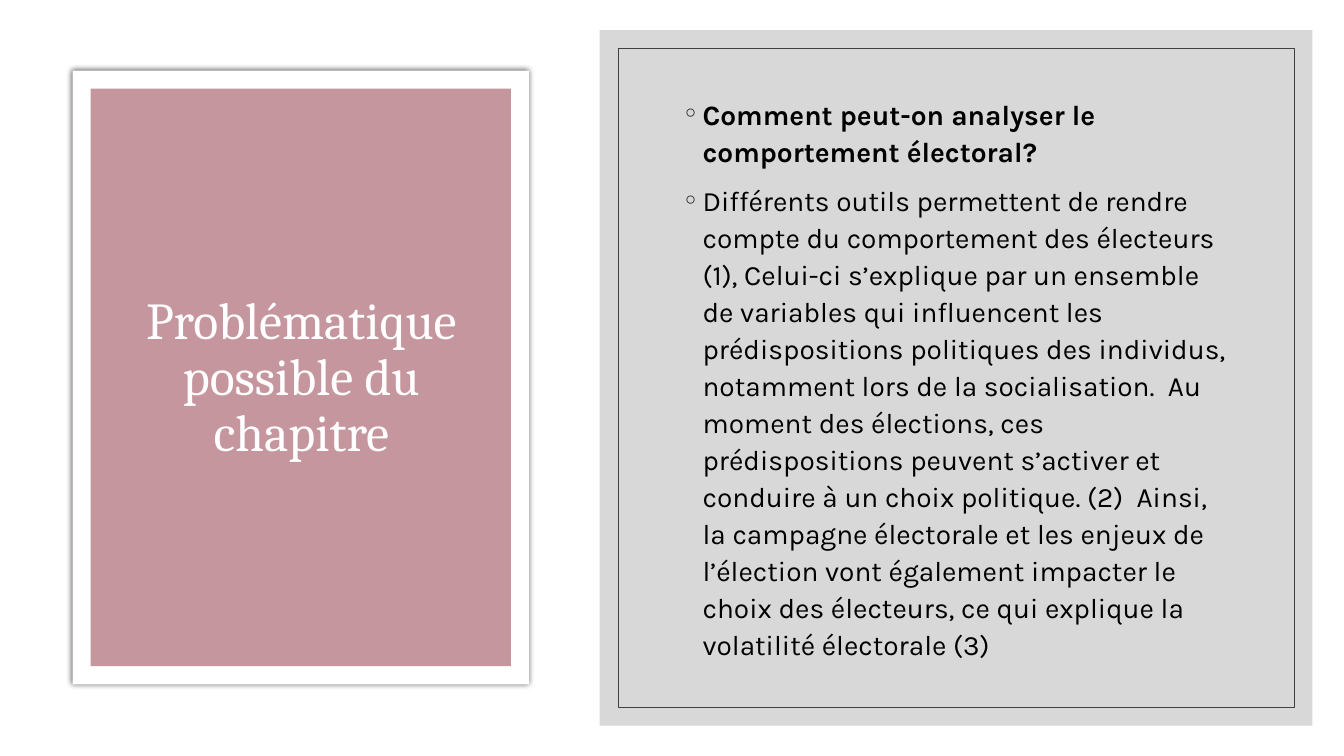
from lxml.etree import SubElement
from pptx import Presentation
from pptx.dml.color import RGBColor
from pptx.enum.shapes import MSO_SHAPE
from pptx.enum.text import MSO_ANCHOR, MSO_AUTO_SIZE, PP_ALIGN
from pptx.oxml.ns import qn
from pptx.util import Pt

TITLE = "Problématique possible du chapitre"
QUESTION = "Comment peut-on analyser le comportement électoral?"
ANSWER = (
    "Différents outils permettent de rendre compte du comportement des électeurs (1), "
    "Celui-ci s’explique par un ensemble de variables qui influencent les prédispositions "
    "politiques des individus, notamment lors de la socialisation.  Au moment des élections, "
    "ces prédispositions peuvent s’activer et conduire à un choix politique. (2)  Ainsi, la "
    "campagne électorale et les enjeux de l’élection vont également impacter le choix des "
    "électeurs, ce qui explique la volatilité électorale (3)"
)
PAGE = (0, 0, 960, 540)
CARD = (51.84, 50.4, 326.16, 438.48)
PANEL = (428.4, 21.6, 509.04, 496.8)
FRAME_GAP = 12.96


def apply(target, formats):
    for name, value in formats.items():
        setattr(target, name, value)


def color(hex_string):
    return RGBColor.from_string(hex_string)


def inset(box, gap):
    left, top, width, height = box
    return left + gap, top + gap, width - 2 * gap, height - 2 * gap


def add_rectangle(slide, box, fill=None, line=None):
    rectangle = slide.shapes.add_shape(MSO_SHAPE.RECTANGLE, *map(Pt, box))
    rectangle.shadow.inherit = False
    if fill:
        rectangle.fill.solid()
        rectangle.fill.fore_color.rgb = color(fill)
    else:
        rectangle.fill.background()
    if line:
        rectangle.line.color.rgb = color(line)
        rectangle.line.width = Pt(0.5)
    else:
        rectangle.line.fill.background()
    return rectangle


def set_alpha(color_element, percent):
    SubElement(color_element, qn("a:alpha"), val=str(percent * 1000))


def add_glow_shadow(card):
    effects = card.element.spPr.find(qn("a:effectLst"))
    shadow = SubElement(effects, qn("a:outerShdw"), blurRad=str(Pt(4)), dist="0",
                        dir="0", algn="ctr", rotWithShape="0")
    set_alpha(SubElement(shadow, qn("a:srgbClr"), val="000000"), 66)


def place_text(placeholder, box):
    left, top, width, height = map(Pt, box)
    apply(placeholder, {"left": left, "top": top, "width": width, "height": height})
    apply(placeholder.text_frame, {"word_wrap": True, "auto_size": MSO_AUTO_SIZE.NONE,
                                   "vertical_anchor": MSO_ANCHOR.MIDDLE})
    placeholder.element.getparent().append(placeholder.element)
    return placeholder.text_frame


def write(paragraph, text, layout, font):
    apply(paragraph, layout)
    run = paragraph.add_run()
    run.text = text
    apply(run.font, {key: value for key, value in font.items() if key != "color"})
    run.font.color.rgb = color(font["color"])


def add_bullet(paragraph):
    properties = paragraph._p.get_or_add_pPr()
    properties.set("marL", str(Pt(14.4)))
    properties.set("indent", str(Pt(-14.4)))
    bullet_color = SubElement(properties, qn("a:buClr"))
    SubElement(bullet_color, qn("a:srgbClr"), val="262626")
    SubElement(properties, qn("a:buFont"), typeface="Karla")
    SubElement(properties, qn("a:buChar"), char="◦")


def write_title(slide):
    heading = place_text(slide.shapes.title, (77.76, 93.6, 275.04, 353.52))
    write(heading.paragraphs[0], TITLE,
          {"alignment": PP_ALIGN.CENTER, "line_spacing": 0.9},
          {"name": "Cambria", "size": Pt(37), "color": "FFFFFF"})


def write_body(slide):
    body = place_text(slide.placeholders[1], (480.24, 73.44, 407.52, 392.4))
    body.add_paragraph()
    for paragraph, text, bold in zip(body.paragraphs, (QUESTION, ANSWER), (True, False)):
        write(paragraph, text,
              {"alignment": PP_ALIGN.LEFT, "line_spacing": 1.1,
               "space_before": Pt(9), "space_after": Pt(0)},
              {"name": "Karla", "size": Pt(20), "bold": bold, "color": "000000"})
        add_bullet(paragraph)


def main():
    presentation = Presentation()
    apply(presentation, {"slide_width": Pt(960), "slide_height": Pt(540)})
    slide = presentation.slides.add_slide(presentation.slide_layouts[1])

    add_rectangle(slide, PAGE, fill="FFFFFF")
    add_glow_shadow(add_rectangle(slide, CARD, fill="FFFFFF"))
    add_rectangle(slide, inset(CARD, FRAME_GAP), fill="C6969E")
    write_title(slide)

    panel = add_rectangle(slide, PANEL, fill="BFBFBF")
    set_alpha(panel.element.spPr.find(qn("a:solidFill"))[0], 60)
    add_rectangle(slide, inset(PANEL, FRAME_GAP), line="404040")
    write_body(slide)

    presentation.save("out.pptx")


if __name__ == "__main__":
    main()
